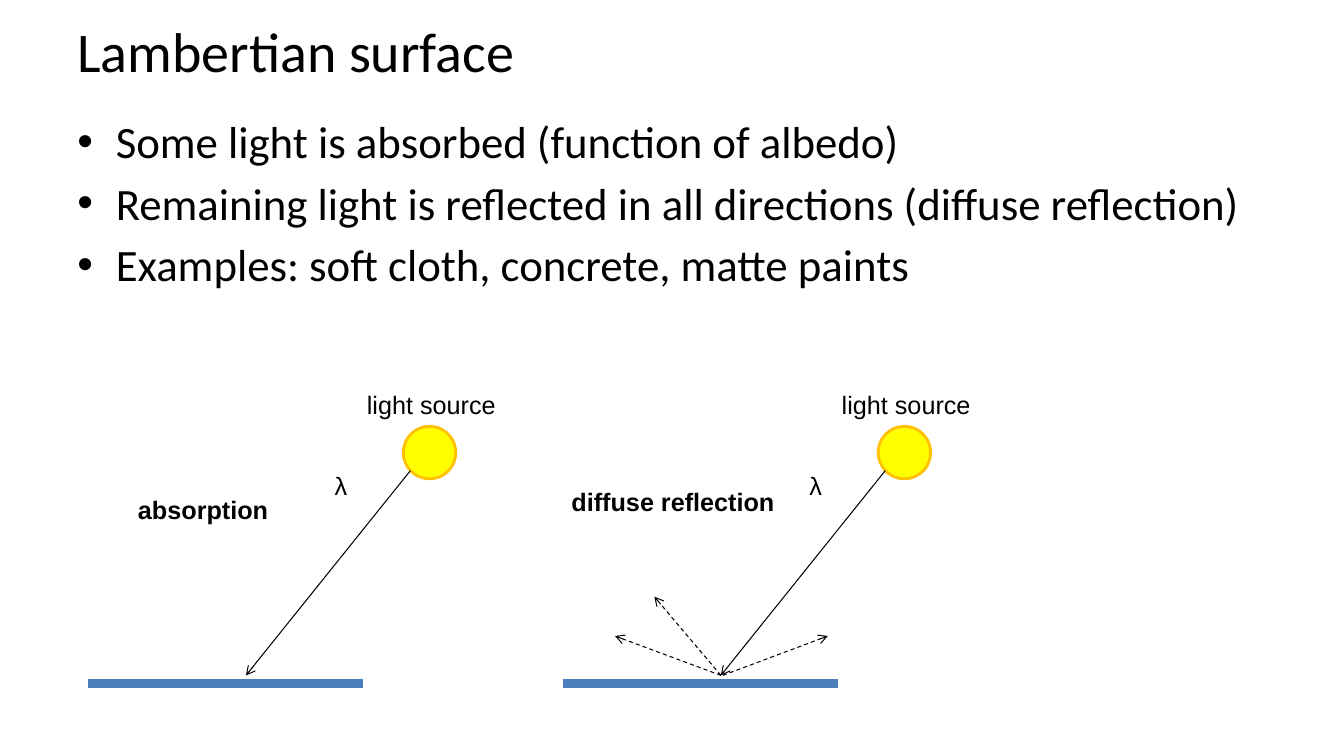
from lxml import etree
from pptx import Presentation
from pptx import util as u
from pptx.dml.color import RGBColor
from pptx.enum import dml, shapes, text
from pptx.oxml import ns

PX = 9144
BLACK = RGBColor(0x00, 0x00, 0x00)
SURFACE_BLUE = RGBColor(0x4B, 0x7E, 0xBC)
SUN_YELLOW = RGBColor(0xFF, 0xFF, 0x00)
SUN_ORANGE = RGBColor(0xFF, 0xC0, 0x00)

deck = Presentation()
deck.slide_width, deck.slide_height = 1333 * PX, 750 * PX
slide = deck.slides.add_slide(deck.slide_layouts[6])


def add_text(left, top, width, height, lines, size, font="Arial", bold=False, wrap=True):
    box = slide.shapes.add_textbox(left * PX, top * PX, width * PX, height * PX)
    frame = box.text_frame
    frame.word_wrap = wrap
    frame.text = "\n".join(lines)
    for paragraph in frame.paragraphs:
        paragraph.font.name = font
        paragraph.font.size = u.Pt(size)
        paragraph.font.bold = bold
        paragraph.font.color.rgb = BLACK
    return frame


def add_line(x1, y1, x2, y2, color=BLACK, width=0.75, arrow=True, dashed=False):
    line = slide.shapes.add_connector(
        shapes.MSO_CONNECTOR.STRAIGHT, x1 * PX, y1 * PX, x2 * PX, y2 * PX)
    line.line.color.rgb = color
    line.line.width = u.Pt(width)
    if dashed:
        line.line.dash_style = dml.MSO_LINE.DASH
    if arrow:
        etree.SubElement(line.line._get_or_add_ln(), ns.qn("a:tailEnd"), type="arrow")
    etree.SubElement(line._element.spPr, ns.qn("a:effectLst"))


title = add_text(67, 0, 1200, 100, ["Lambertian surface"], 40, "Calibri")
title.vertical_anchor = text.MSO_ANCHOR.MIDDLE

facts = add_text(67, 108, 1200, 562, [
    "Some light is absorbed (function of albedo)",
    "Remaining light is reflected in all directions (diffuse reflection)",
    "Examples: soft cloth, concrete, matte paints",
], 32, "Calibri")
for fact in facts.paragraphs:
    fact.space_before = u.Pt(5.6)
    properties = fact._p.get_or_add_pPr()
    properties.set("marL", str(38 * PX))
    properties.set("indent", str(-38 * PX))
    etree.SubElement(properties, ns.qn("a:buFont"), typeface="Arial")
    etree.SubElement(properties, ns.qn("a:buChar"), char="•")
    properties.append(properties.find(ns.qn("a:defRPr")))

for shift in (0, 471):
    add_line(87 + shift, 678, 360 + shift, 678, SURFACE_BLUE, 6, arrow=False)
    sun = slide.shapes.add_shape(
        shapes.MSO_SHAPE.OVAL, (400 + shift) * PX, 423 * PX, 52 * PX, 52 * PX)
    sun.shadow.inherit = False
    sun.fill.solid()
    sun.fill.fore_color.rgb = SUN_YELLOW
    sun.line.color.rgb = SUN_ORANGE
    sun.line.width = u.Pt(2)
    add_line(407 + shift, 467, 244 + shift, 670)
    add_text(322 + shift, 462, 33, 40, ["λ"], 18, wrap=False)
    add_text(354 + shift, 381, 150, 42, ["light source"], 18)

for start_x, tip_x, tip_y in ((715, 649, 592), (715, 610, 631), (717, 821, 631)):
    add_line(start_x, 670, tip_x, tip_y, dashed=True)

add_text(127, 485, 151, 40, ["absorption"], 18, bold=True, wrap=False)
add_text(557, 478, 224, 40, ["diffuse reflection"], 18, bold=True, wrap=False)

deck.save("out.pptx")
